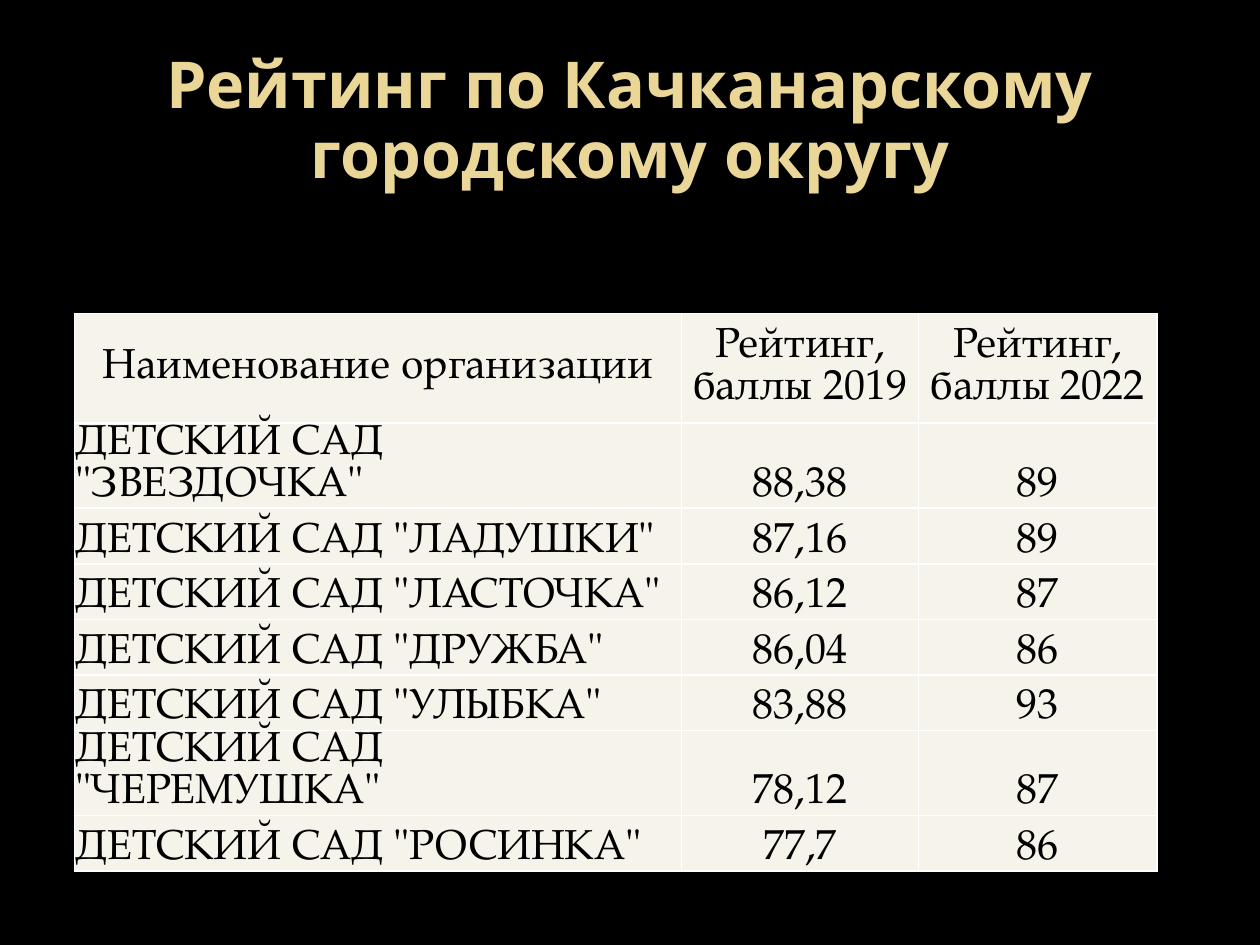
"""Builds a slide with a rating table of kindergartens."""
from dataclasses import dataclass

from lxml import etree
from pptx import Presentation
from pptx.dml.color import RGBColor
from pptx.enum.text import MSO_ANCHOR, PP_ALIGN
from pptx.oxml.ns import qn
from pptx.util import Cm, Pt

CENTER, LEFT = PP_ALIGN.CENTER, PP_ALIGN.LEFT
MIDDLE, BOTTOM = MSO_ANCHOR.MIDDLE, MSO_ANCHOR.BOTTOM

BACKGROUND, GOLD, CREAM, INK, RULE = "000000", "EAD696", "F6F3EA", "000000", "FFFFFF"
TITLE = "Рейтинг по Качканарскому городскому округу"
TITLE_FORMAT = {"name": "Noto Sans", "size": Pt(36.9), "bold": True}
CELL_FORMAT = {"name": "TeX Gyre Pagella", "size": Pt(24), "bold": False}
CELL_MARGINS = {"margin_left": Cm(0.02), "margin_right": Cm(0.02),
                "margin_top": Cm(0.02), "margin_bottom": Cm(0)}
COLUMN_WIDTHS = (12.24, 4.78, 4.8)
HEADER_HEIGHT, ROW_HEIGHT = 2.21, 1.12
HEADINGS = ("Наименование организации", "Рейтинг, баллы 2019", "Рейтинг, баллы 2022")


@dataclass(frozen=True)
class Kindergarten:
    name: str
    score_2019: str
    score_2022: str

    def texts(self) -> tuple[str, str, str]:
        return f'ДЕТСКИЙ САД "{self.name}"', self.score_2019, self.score_2022


KINDERGARTENS = (
    Kindergarten("ЗВЕЗДОЧКА", "88,38", "89"),
    Kindergarten("ЛАДУШКИ", "87,16", "89"),
    Kindergarten("ЛАСТОЧКА", "86,12", "87"),
    Kindergarten("ДРУЖБА", "86,04", "86"),
    Kindergarten("УЛЫБКА", "83,88", "93"),
    Kindergarten("ЧЕРЕМУШКА", "78,12", "87"),
    Kindergarten("РОСИНКА", "77,7", "86"),
)


def paint(fill, color: str) -> None:
    fill.solid()
    fill.fore_color.rgb = RGBColor.from_string(color)


def apply(target, values: dict) -> None:
    for attribute, value in values.items():
        setattr(target, attribute, value)


def write(frame, text: str, font_format: dict, color: str, align, spacing) -> None:
    paragraph = frame.paragraphs[0]
    apply(paragraph, {"alignment": align, "line_spacing": spacing})
    run = paragraph.add_run()
    run.text = text
    apply(run.font, font_format)
    paint(run.font.fill, color)


def draw_borders(cell) -> None:
    properties = cell._tc.get_or_add_tcPr()
    for position, side in enumerate(("lnL", "lnR", "lnT", "lnB")):
        line = etree.Element(qn(f"a:{side}"), w=str(Pt(1)))
        fill = etree.SubElement(line, qn("a:solidFill"))
        etree.SubElement(fill, qn("a:srgbClr"), val=RULE)
        properties.insert(position, line)


def add_title(slide) -> None:
    frame = slide.shapes.add_textbox(Cm(1.27), Cm(0.76), Cm(22.86), Cm(3.18)).text_frame
    apply(frame, {"word_wrap": True, "vertical_anchor": MIDDLE, "margin_top": Cm(0.38)})
    write(frame, TITLE, TITLE_FORMAT, GOLD, CENTER, 0.9)


def add_ratings(slide) -> None:
    rows = [HEADINGS, *(kindergarten.texts() for kindergarten in KINDERGARTENS)]
    heights = [HEADER_HEIGHT] + [ROW_HEIGHT] * len(KINDERGARTENS)
    table = slide.shapes.add_table(
        len(rows), len(HEADINGS), Cm(1.5), Cm(6.32),
        Cm(sum(COLUMN_WIDTHS)), Cm(sum(heights))).table
    for column, width in zip(table.columns, COLUMN_WIDTHS):
        column.width = Cm(width)
    for row_index, (texts, height) in enumerate(zip(rows, heights)):
        table.rows[row_index].height = Cm(height)
        for column_index, text in enumerate(texts):
            is_header = row_index == 0
            cell = table.cell(row_index, column_index)
            apply(cell, {**CELL_MARGINS, "vertical_anchor": MIDDLE if is_header else BOTTOM})
            paint(cell.fill, CREAM)
            draw_borders(cell)
            align = CENTER if is_header or column_index else LEFT
            write(cell.text_frame, text, CELL_FORMAT, INK, align, Pt(24))


def main() -> None:
    presentation = Presentation()
    apply(presentation, {"slide_width": Cm(25.4), "slide_height": Cm(19.05)})
    slide = presentation.slides.add_slide(presentation.slide_layouts[6])
    paint(slide.background.fill, BACKGROUND)
    add_title(slide)
    add_ratings(slide)
    presentation.save("out.pptx")


if __name__ == "__main__":
    main()
